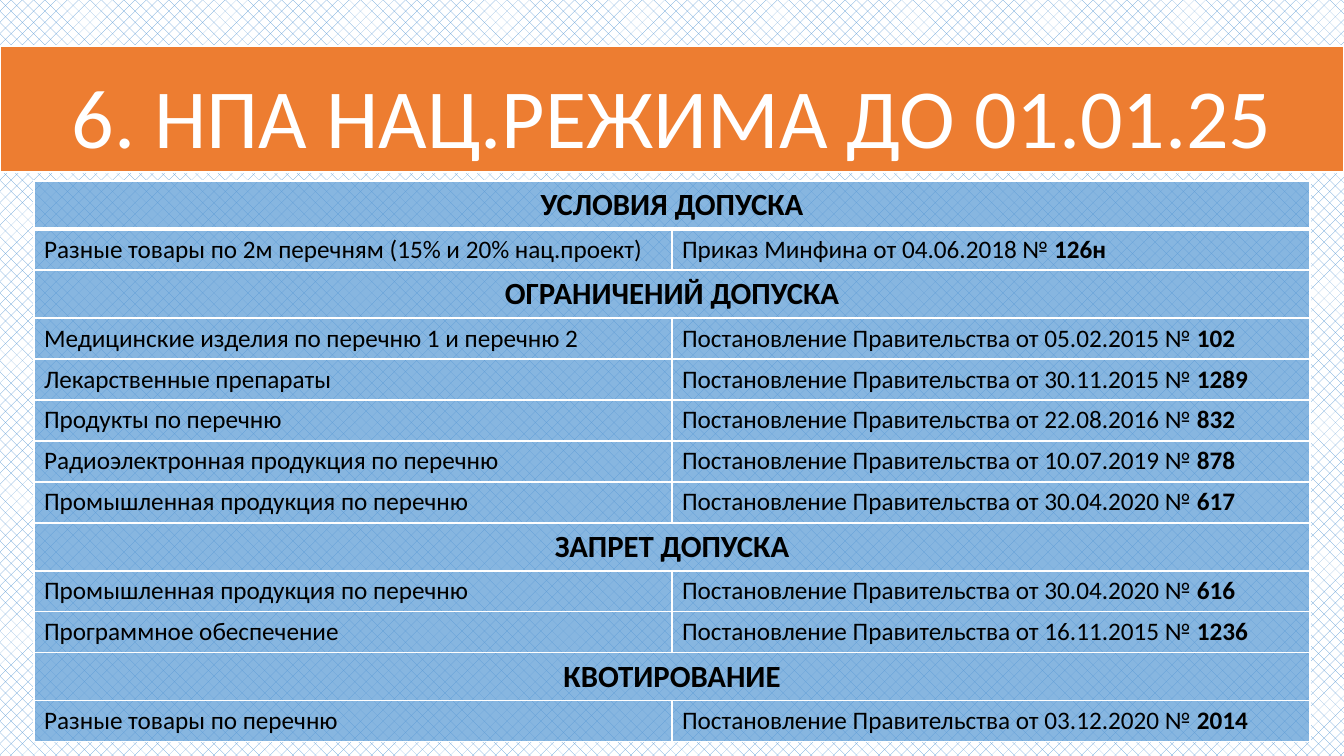
from lxml import etree
from pptx import Presentation
from pptx import util as u
from pptx.dml.color import RGBColor
from pptx.enum import dml, text
from pptx.oxml.ns import qn

WHITE, BLACK, BLUE, ORANGE = "FFFFFF", "000000", "5B9BD5", "ED7D31"
DECREE = "Постановление Правительства от"

SECTIONS = [
    ("УСЛОВИЯ ДОПУСКА", [
        ("Разные товары по 2м перечням (15% и 20% нац.проект)",
         "Приказ Минфина от 04.06.2018", "126н"),
    ]),
    ("ОГРАНИЧЕНИЙ ДОПУСКА", [
        ("Медицинские изделия по перечню 1 и перечню 2", f"{DECREE} 05.02.2015", "102"),
        ("Лекарственные препараты", f"{DECREE} 30.11.2015", "1289"),
        ("Продукты по перечню", f"{DECREE} 22.08.2016", "832"),
        ("Радиоэлектронная продукция по перечню", f"{DECREE} 10.07.2019", "878"),
        ("Промышленная продукция по перечню", f"{DECREE} 30.04.2020", "617"),
    ]),
    ("ЗАПРЕТ ДОПУСКА", [
        ("Промышленная продукция по перечню", f"{DECREE} 30.04.2020", "616"),
        ("Программное обеспечение", f"{DECREE} 16.11.2015", "1236"),
    ]),
    ("КВОТИРОВАНИЕ", [
        ("Разные товары по перечню", f"{DECREE} 03.12.2020", "2014"),
    ]),
]


def px(n):
    return u.Emu(round(n * 914400 / 100.8))


def rgb(value):
    return RGBColor.from_string(value)


class Deck:
    font = "Calibri"
    section_height, item_height = 48, 41

    def __init__(self, width, height):
        self.prs = Presentation()
        self.prs.slide_width, self.prs.slide_height = px(width), px(height)
        self.s = self.prs.slides.add_slide(self.prs.slide_layouts[0])
        sub = self.s.placeholders[1].element
        sub.getparent().remove(sub)

    def background(self, pattern, fore, back):
        fill = self.s.background.fill
        fill.patterned()
        fill.pattern = pattern
        fill.fore_color.rgb, fill.back_color.rgb = rgb(fore), rgb(back)

    def style(self, r, size, color, bold=False):
        r.font.name, r.font.size, r.font.bold = self.font, u.Pt(size), bold
        r.font.color.rgb = rgb(color)

    def title(self, label, x, y, w, h):
        sp = self.s.shapes.title
        sp.left, sp.top, sp.width, sp.height = map(px, (x, y, w, h))
        sp.fill.solid()
        sp.fill.fore_color.rgb = rgb(ORANGE)
        sp.line.color.rgb, sp.line.width = rgb(WHITE), u.Pt(1.5)
        tf = sp.text_frame
        tf.text = label
        tf.auto_size = text.MSO_AUTO_SIZE.NONE
        tf.vertical_anchor = text.MSO_ANCHOR.BOTTOM
        p = tf.paragraphs[0]
        p.alignment, p.line_spacing = text.PP_ALIGN.CENTER, 0.9
        self.style(p.runs[0], 60, WHITE)

    def cell(self, cell, top=1, bottom=1):
        cell.fill.solid()
        cell.fill.fore_color.rgb = rgb(BLUE)
        tc_pr = cell._tc.get_or_add_tcPr()
        color = tc_pr.find(".//" + qn("a:srgbClr"))
        etree.SubElement(color, qn("a:alpha"), val="73000")
        sides = {"lnL": 1, "lnR": 1, "lnT": top, "lnB": bottom}
        for i, (side, width) in enumerate(sides.items()):
            ln = etree.Element(qn("a:" + side), w=str(u.Pt(width)))
            fill = etree.SubElement(ln, qn("a:solidFill"))
            etree.SubElement(fill, qn("a:srgbClr"), val=WHITE)
            tc_pr.insert(i, ln)

    def table(self, sections, x, y, col_width):
        rows = []
        for heading, items in sections:
            rows += [(heading,), *items]
        heights = [self.section_height if len(row) == 1 else self.item_height
                   for row in rows]
        frame = self.s.shapes.add_table(len(rows), 2, px(x), px(y),
                                        px(2 * col_width), px(sum(heights)))
        tbl = frame.table
        tbl.first_row = tbl.horz_banding = False
        for col in tbl.columns:
            col.width = px(col_width)
        for i, row in enumerate(rows):
            tbl.rows[i].height = px(heights[i])
            left, right = tbl.cell(i, 0), tbl.cell(i, 1)
            for c in (left, right):
                self.cell(c, top=3 if i == 1 else 1, bottom=3 if i == 0 else 1)
            p = left.text_frame.paragraphs[0]
            p.text = row[0]
            if len(row) == 1:
                left.merge(right)
                p.alignment = text.PP_ALIGN.CENTER
                self.style(p.runs[0], 22, BLACK, True)
                continue
            self.style(p.runs[0], 18, BLACK)
            p = right.text_frame.paragraphs[0]
            p.text = row[1] + " № "
            self.style(p.runs[0], 18, BLACK)
            r = p.add_run()
            r.text = row[2]
            self.style(r, 18, BLACK, True)


def main():
    deck = Deck(1344, 756)
    deck.background(dml.MSO_PATTERN.PERCENT_25, BLUE, WHITE)
    deck.title("6. НПА НАЦ.РЕЖИМА ДО 01.01.25", 0, 46, 1344, 126)
    deck.table(SECTIONS, 34, 181, 638)
    deck.prs.save("out.pptx")


if __name__ == "__main__":
    main()
